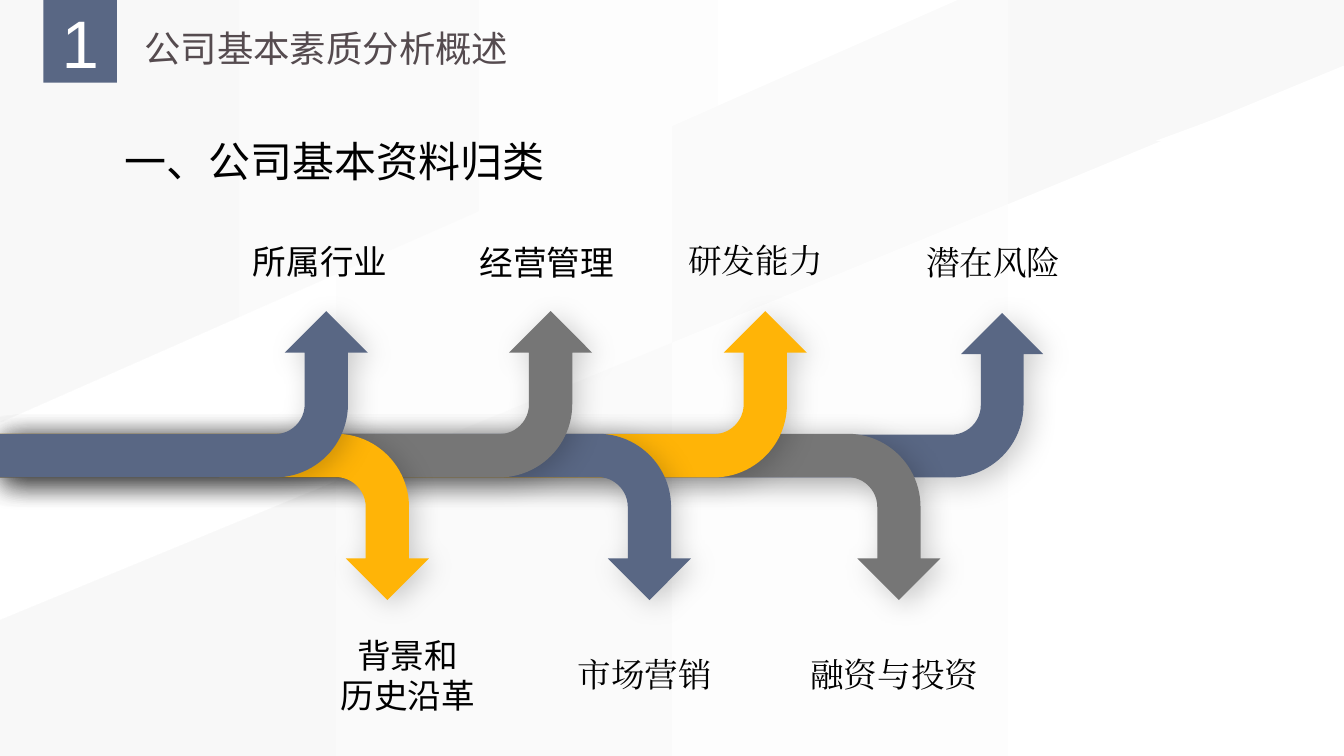
"""Build the company profile slide with its branching arrows."""
from dataclasses import dataclass

from lxml import etree
from pptx import Presentation
from pptx.dml.color import RGBColor
from pptx.enum import shapes, text
from pptx.oxml import ns
from pptx.util import Pt

SLATE = RGBColor(0x59, 0x67, 0x84)
GREY = RGBColor(0x76, 0x76, 0x76)
AMBER = RGBColor(0xFF, 0xB4, 0x07)
BROWN = RGBColor(0x55, 0x4B, 0x4F)
MIST = RGBColor(0xF8, 0xF8, 0xF8)
WHITE = RGBColor(0xFF, 0xFF, 0xFF)
BLACK = RGBColor(0, 0, 0)

SANS, SERIF, CJK = "Arial", "Times New Roman", "Noto Sans CJK SC"
WIDTH, HEIGHT = 960, 540
UP_BOTTOM, DOWN_TOP = 341, 309.8


@dataclass
class Facet:
    points: list[tuple[float, float]]
    colours: tuple[RGBColor, RGBColor]


@dataclass
class Arrow:
    reach: float
    up: bool
    colour: RGBColor
    depth: float = 118.8


@dataclass
class Label:
    text: str
    left: float
    top: float
    width: float
    font: str
    height: float = 45.4
    spacing: float = 1.5
    align: text.PP_ALIGN = text.PP_ALIGN.LEFT


FACETS = [
    Facet([(0, 0), (WIDTH, 0), (WIDTH, HEIGHT), (0, HEIGHT)], (MIST, WHITE)),
    Facet([(0, 0), (684, 0), (0, 301.7)], (WHITE, MIST)),
    Facet([(0, 443), (WIDTH, 46.8), (WIDTH, HEIGHT), (0, HEIGHT)], (WHITE, MIST)),
    Facet([(825, 100.8), (WIDTH, 51), (WIDTH, 100.8)], (WHITE, WHITE)),
]
ARROWS = [
    Arrow(745.2, True, SLATE, 117.4),
    Arrow(671.8, False, GREY),
    Arrow(576.4, True, AMBER),
    Arrow(493.6, False, SLATE),
    Arrow(423, True, GREY),
    Arrow(306.4, False, AMBER),
    Arrow(262.8, True, SLATE),
]
LABELS = [
    Label("所属行业", 173.5, 154.1, 118.8, SANS),
    Label("经营管理", 335.5, 154.8, 118.8, SANS),
    Label("研发能力", 484.6, 153.4, 118.8, SERIF),
    Label("潜在风险", 654.5, 154.8, 115.2, SERIF),
    Label("背景和\n历史沿革", 218.9, 450, 144.7, SANS, 65.5, 1, text.PP_ALIGN.CENTER),
    Label("市场营销", 405.4, 449.3, 114.5, SERIF),
    Label("融资与投资", 571.7, 449.3, 138.2, SERIF),
]


def write(sp, words: str, *, size: float, font: str, colour: RGBColor = BLACK,
          align=text.PP_ALIGN.LEFT, spacing: float = 1, before: float = 0,
          after: float = 0, margin: float | None = None) -> None:
    tf = sp.text_frame
    tf.word_wrap = True
    tf.auto_size = text.MSO_AUTO_SIZE.NONE
    tf.vertical_anchor = text.MSO_ANCHOR.TOP
    if margin is not None:
        tf.margin_left = tf.margin_right = Pt(margin)
        tf.margin_top = tf.margin_bottom = Pt(margin)
    for i, line in enumerate(words.split("\n")):
        p = tf.add_paragraph() if i else tf.paragraphs[0]
        p.alignment, p.line_spacing = align, spacing
        p.space_before, p.space_after = Pt(before), Pt(after)
        r = p.add_run()
        r.text = line
        r.font.size, r.font.name = Pt(size), font
        r.font.color.rgb = colour
        ea = etree.SubElement(r._r.get_or_add_rPr(), ns.qn("a:ea"))
        ea.set("typeface", font)


def add_box(s, left: float, top: float, width: float, height: float):
    return s.shapes.add_textbox(Pt(left), Pt(top), Pt(width), Pt(height))


def add_facet(s, facet: Facet) -> None:
    (x, y), *rest = facet.points
    builder = s.shapes.build_freeform(Pt(x), Pt(y))
    builder.add_line_segments([(Pt(px), Pt(py)) for px, py in rest], close=True)
    sp = builder.convert_to_shape()
    sp.shadow.inherit = False
    sp.line.fill.background()
    sp.fill.gradient()
    sp.fill.gradient_angle = 180
    for stop, colour, place in zip(sp.fill.gradient_stops, facet.colours, (0, 1)):
        stop.color.rgb, stop.position = colour, place


def add_solid(s, kind, left: float, top: float, width: float, height: float,
              colour: RGBColor):
    sp = s.shapes.add_shape(kind, Pt(left), Pt(top), Pt(width), Pt(height))
    sp.shadow.inherit = False
    sp.fill.solid()
    sp.fill.fore_color.rgb = colour
    sp.line.fill.background()
    return sp


def add_arrow(s, arrow: Arrow) -> None:
    centre = UP_BOTTOM - arrow.depth / 2 if arrow.up else DOWN_TOP + arrow.depth / 2
    sp = add_solid(s, shapes.MSO_SHAPE.BENT_ARROW,
                   (arrow.reach - arrow.depth) / 2, centre - arrow.reach / 2,
                   arrow.depth, arrow.reach, arrow.colour)
    for i, value in enumerate((0.26, 0.25, 0.25, 0.44)):
        sp.adjustments[i] = value
    sp.rotation = 90 if arrow.up else 270
    xfrm = sp.element.spPr.get_or_add_xfrm()
    xfrm.set("flipH", "1")
    if not arrow.up:
        xfrm.set("flipV", "1")
    effects = sp.element.spPr.find(ns.qn("a:effectLst"))
    shadow = etree.SubElement(effects, ns.qn("a:outerShdw"), blurRad=str(Pt(20)),
                              dist=str(Pt(5)), dir="2700000", algn="tl",
                              rotWithShape="0")
    tint = etree.SubElement(shadow, ns.qn("a:srgbClr"), val=str(BLACK))
    etree.SubElement(tint, ns.qn("a:alpha"), val="20000")


def main() -> None:
    prs = Presentation()
    prs.slide_width, prs.slide_height = Pt(WIDTH), Pt(HEIGHT)
    s = prs.slides.add_slide(prs.slide_layouts[5])
    for facet in FACETS:
        add_facet(s, facet)

    title = s.shapes.title
    title.left, title.top, title.width, title.height = Pt(95.8), Pt(5.8), Pt(280), Pt(44.6)
    write(title, "公司基本素质分析概述", size=26, font=CJK, colour=BROWN, spacing=1.3)
    s.shapes.element.append(title.element)

    add_solid(s, shapes.MSO_SHAPE.RECTANGLE, 31, 0, 52.6, 59, SLATE)
    write(add_box(s, 31, 0.7, 52.6, 58.3), "1", size=48, font=SANS, colour=WHITE,
          align=text.PP_ALIGN.CENTER, margin=0)

    for arrow in ARROWS:
        add_arrow(s, arrow)
    for label in LABELS:
        write(add_box(s, label.left, label.top, label.width, label.height), label.text,
              size=24, font=label.font, align=label.align, spacing=label.spacing)
    write(add_box(s, 82, 93.6, 337, 44), "一、公司基本资料归类", size=30, font=CJK,
          align=text.PP_ALIGN.JUSTIFY, before=9, after=5)
    prs.save("out.pptx")


if __name__ == "__main__":
    main()
